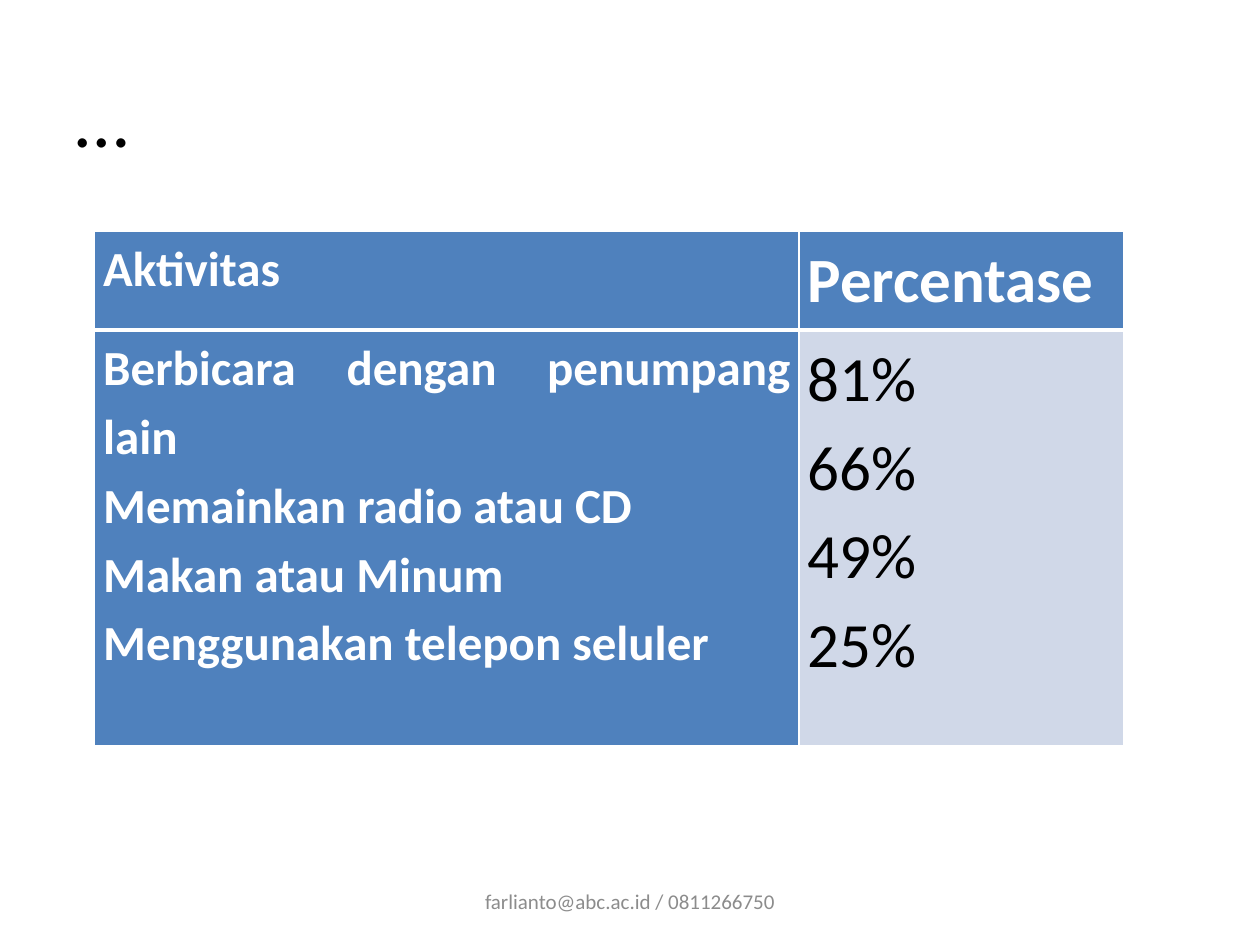
from lxml.etree import SubElement
from pptx import Presentation
from pptx.dml.color import RGBColor
from pptx.enum.text import MSO_ANCHOR as ANCHOR, PP_ALIGN as ALIGN
from pptx.oxml.ns import qn
from pptx.util import Pt

BLACK = RGBColor(0x00, 0x00, 0x00)
WHITE = RGBColor(0xFF, 0xFF, 0xFF)
GRAY = RGBColor(0x8C, 0x8C, 0x8C)
BLUE = RGBColor(0x4F, 0x81, 0xBD)
PALE = RGBColor(0xD0, 0xD8, 0xE8)

ACTIVITIES = [
    ("Berbicara dengan penumpang lain", "81%"),
    ("Memainkan radio atau CD", "66%"),
    ("Makan atau Minum", "49%"),
    ("Menggunakan telepon seluler", "25%"),
]


class Deck:
    font = "Calibri"
    spacing = 1.15
    cell_format = dict(margin_left=Pt(5), margin_right=Pt(5),
                       margin_top=0, margin_bottom=0)

    def __init__(self, width, height):
        self.prs = Presentation()
        self.prs.slide_width, self.prs.slide_height = Pt(width), Pt(height)
        self.s = self.prs.slides.add_slide(self.prs.slide_layouts[6])

    def paragraphs(self, tf, lines, size, color, bold=False, **para):
        for i, line in enumerate(lines):
            p = tf.paragraphs[0] if i == 0 else tf.add_paragraph()
            for name, value in para.items():
                setattr(p, name, value)
            r = p.add_run()
            r.text = line
            fmt = dict(name=self.font, size=Pt(size), bold=bold)
            for name, value in fmt.items():
                setattr(r.font, name, value)
            r.font.color.rgb = color

    def text(self, box, line, size, color, align):
        tf = self.s.shapes.add_textbox(*map(Pt, box)).text_frame
        tf.word_wrap = True
        tf.vertical_anchor = ANCHOR.MIDDLE
        self.paragraphs(tf, [line], size, color, alignment=align)

    def border(self, cell, **widths):
        tc_pr = cell._tc.get_or_add_tcPr()
        for i, (side, width) in enumerate(widths.items()):
            ln = SubElement(tc_pr, qn(f"a:ln{side}"), w=str(Pt(width)))
            fill = SubElement(ln, qn("a:solidFill"))
            SubElement(fill, qn("a:srgbClr"), val=str(WHITE))
            tc_pr.insert(i, ln)

    def cell(self, cell, lines, size, color, bold, fill):
        for name, value in self.cell_format.items():
            setattr(cell, name, value)
        cell.fill.solid()
        cell.fill.fore_color.rgb = fill
        self.paragraphs(cell.text_frame, lines, size, color, bold,
                        alignment=ALIGN.JUSTIFY, line_spacing=self.spacing)

    def table(self, left, top, widths, heights, rows):
        box = left, top, sum(widths), sum(heights)
        table = self.s.shapes.add_table(
            len(heights), len(widths), *map(Pt, box)).table
        table.first_row = table.horz_banding = False
        for column, width in zip(table.columns, widths):
            column.width = Pt(width)
        for i, (row, height) in enumerate(zip(table.rows, heights)):
            row.height = Pt(height)
            for cell, content in zip(row.cells, rows[i]):
                self.cell(cell, *content)
                self.border(cell, L=1, R=1, T=3 if i else 1, B=1 if i else 3)


def main():
    deck = Deck(720, 540)
    deck.text((36, 21.6, 648, 90), "…", 44, BLACK, ALIGN.LEFT)
    names, shares = zip(*ACTIVITIES)
    deck.table(54, 132, (402.5, 185.5), (56.5, 237.5), [
        [(["Aktivitas"], 28, WHITE, True, BLUE),
         (["Percentase"], 36, WHITE, True, BLUE)],
        [(names, 28, WHITE, True, BLUE),
         (shares, 36, BLACK, False, PALE)],
    ])
    deck.text((246, 500.5, 228, 28.75), "farlianto@abc.ac.id / 0811266750",
              12, GRAY, ALIGN.CENTER)
    deck.prs.save("out.pptx")


if __name__ == "__main__":
    main()
